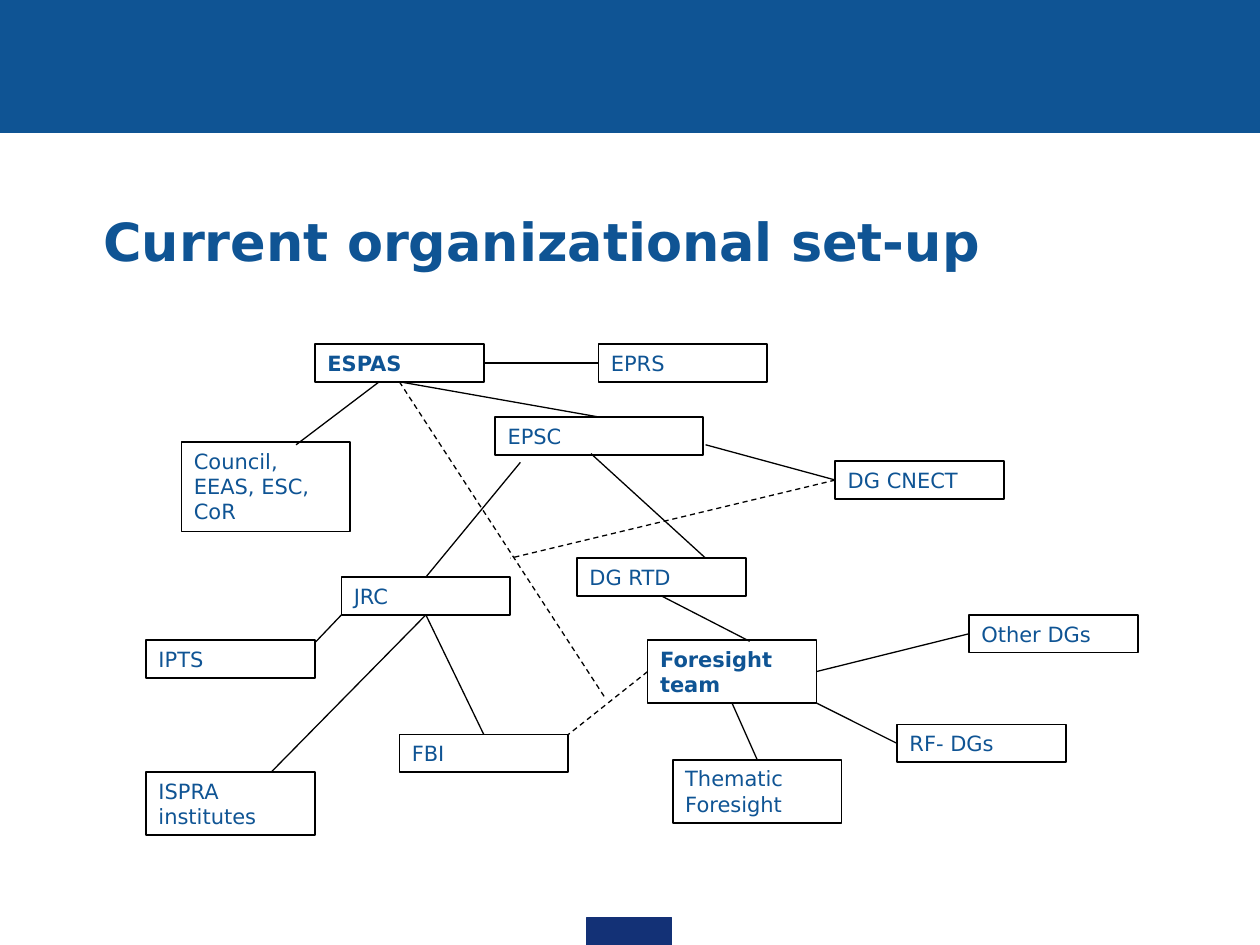
from lxml.etree import SubElement
from pptx import Presentation
from pptx.dml.color import RGBColor
from pptx.enum.dml import MSO_LINE
from pptx.enum.shapes import MSO_CONNECTOR, MSO_SHAPE
from pptx.enum.text import MSO_ANCHOR, PP_ALIGN
from pptx.oxml.ns import qn
from pptx.util import Inches, Pt

BLUE = RGBColor(0x0F, 0x54, 0x94)
NAVY = RGBColor(0x13, 0x31, 0x76)
BLACK = RGBColor(0x00, 0x00, 0x00)
FONT = "DejaVu Sans"

COLUMNS, ROWS = 100, 75
CELL = Inches(10) // COLUMNS
BOX_WIDTH = 13.4
LINE_HEIGHTS = {1: 3, 2: 5, 3: 7.1}
TOP, LEFT, BOTTOM, RIGHT = range(4)

# label, column, row, lines of text
UNITS = [
    ("ESPAS", 25, 27.3, 1),
    ("EPRS", 47.5, 27.3, 1),
    ("EPSC", 39.3, 33.1, 1),
    ("JRC", 27.1, 45.8, 1),
    ("Council, EEAS, ESC, CoR", 14.4, 35.1, 3),
    ("DG RTD", 45.8, 44.3, 1),
    ("FBI", 31.7, 58.3, 1),
    ("ISPRA institutes", 11.6, 61.3, 2),
    ("DG CNECT", 66.3, 36.6, 1),
    ("IPTS", 11.6, 50.8, 1),
    ("Foresight team", 51.4, 50.8, 2),
    ("Other DGs", 76.9, 48.8, 1),
    ("RF- DGs", 71.2, 57.5, 1),
    ("Thematic Foresight", 53.4, 60.3, 2),
]
WIDE_UNITS = {"EPSC": 16.5}
BOLD_UNITS = {"ESPAS", "Foresight team"}

# each end is (unit, side) or a free (column, row)
SOLID_LINKS = [
    (("ESPAS", RIGHT), ("EPRS", LEFT)),
    (("ESPAS", BOTTOM), ("EPSC", TOP)),
    ((30.1, 30.3), (23.5, 35.3)),
    ((56, 35.3), ("DG CNECT", LEFT)),
    ((46.9, 36), (56, 44.3)),
    (("JRC", BOTTOM), (21.5, 61.3)),
    (("JRC", TOP), (41.3, 36.7)),
    ((25, 51), (27.1, 48.8)),
    (("JRC", BOTTOM), ("FBI", TOP)),
    (("DG RTD", BOTTOM), (59.5, 50.9)),
    (("Foresight team", BOTTOM), ("Thematic Foresight", TOP)),
    ((64.8, 55.8), ("RF- DGs", LEFT)),
    (("Foresight team", RIGHT), ("Other DGs", LEFT)),
]
DASHED_LINKS = [
    (("ESPAS", BOTTOM), (48.1, 55.5)),
    (("Foresight team", LEFT), (45.1, 58.3)),
    (("DG CNECT", LEFT), (40.5, 44.3)),
]


def cells(*counts):
    return [round(count * CELL) for count in counts]


def style_font(font, size, bold):
    font.name, font.size, font.bold = FONT, Pt(size), bold
    font.color.rgb = BLUE


def add_rectangle(page, column, row, width, height):
    box = page.shapes.add_shape(
        MSO_SHAPE.RECTANGLE, *cells(column, row, width, height))
    box.shadow.inherit = False
    return box


def add_band(page, place, color):
    band = add_rectangle(page, *place)
    band.fill.solid()
    band.fill.fore_color.rgb = color
    band.line.color.rgb = color
    band.line.width = Pt(0.75)


def set_title(page, text):
    title = page.shapes.title
    title.left, title.top, title.width, title.height = cells(3.3, 14, 90, 10.2)
    title.text_frame.text = text
    title.text_frame.vertical_anchor = MSO_ANCHOR.MIDDLE
    para = title.text_frame.paragraphs[0]
    para.alignment = PP_ALIGN.LEFT
    properties = para._p.get_or_add_pPr()
    properties.set("marL", str(Inches(0.39)))
    properties.set("indent", "0")
    style_font(para.runs[0].font, 30, True)


def add_unit(page, label, column, row, lines):
    width = WIDE_UNITS.get(label, BOX_WIDTH)
    box = add_rectangle(page, column, row, width, LINE_HEIGHTS[lines])
    box.fill.background()
    box.line.color.rgb = BLACK
    box.line.width = Pt(1)
    frame = box.text_frame
    frame.word_wrap = True
    frame.vertical_anchor = MSO_ANCHOR.TOP
    frame.text = label
    para = frame.paragraphs[0]
    para.alignment = PP_ALIGN.LEFT
    style_font(para.runs[0].font, 12, label in BOLD_UNITS)
    return box


def add_link(page, boxes, start, end, dashed):
    """Draw a line, joined to a box wherever an end names one."""
    points = [(0, 0) if place[0] in boxes else place for place in (start, end)]
    link = page.shapes.add_connector(
        MSO_CONNECTOR.STRAIGHT, *cells(*points[0], *points[1]))
    for place, connect in ((start, link.begin_connect), (end, link.end_connect)):
        if place[0] in boxes:
            connect(boxes[place[0]], place[1])
    link.line.color.rgb = BLACK
    link.line.width = Pt(0.75)
    if dashed:
        link.line.dash_style = MSO_LINE.DASH
    SubElement(link._element.spPr, qn("a:effectLst"))


def main():
    deck = Presentation()
    deck.slide_width, deck.slide_height = cells(COLUMNS, ROWS)
    page = deck.slides.add_slide(deck.slide_layouts[5])
    add_band(page, (0, 0, COLUMNS, 10.5), BLUE)
    add_band(page, (46.6, 72.8, 6.7, 2.2), NAVY)
    set_title(page, "Current organizational set-up")
    boxes = {unit[0]: add_unit(page, *unit) for unit in UNITS}
    for links, dashed in ((DASHED_LINKS, True), (SOLID_LINKS, False)):
        for start, end in links:
            add_link(page, boxes, start, end, dashed)
    deck.save("out.pptx")


if __name__ == "__main__":
    main()
